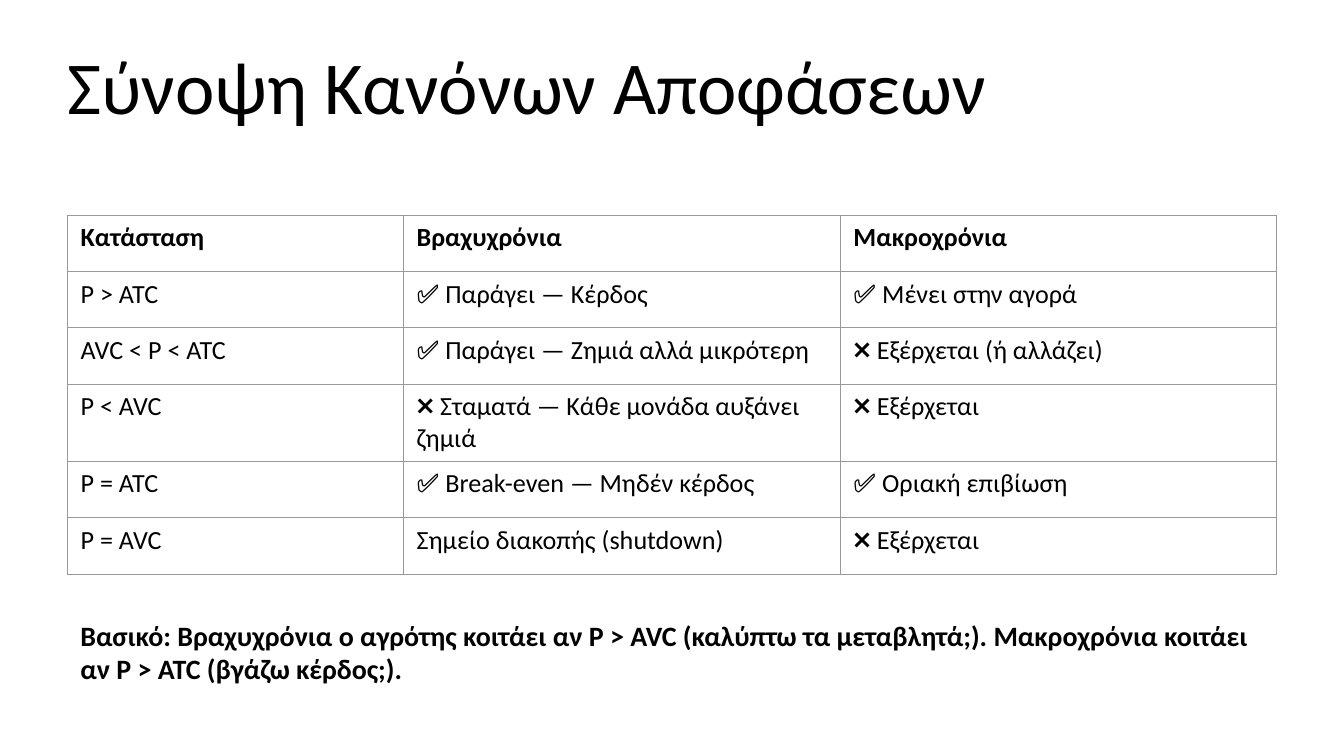
from dataclasses import dataclass

import lxml.etree
import pptx
import pptx.dml.color
import pptx.enum.text
import pptx.oxml.ns
import pptx.util

Pt = pptx.util.Pt
Anchor = pptx.enum.text.MSO_ANCHOR


@dataclass(frozen=True)
class Theme:
    font: str = "Calibri"
    text: str = "000000"
    border: str = "999999"
    border_width: float = 0.5
    title_size: float = 40
    table_size: float = 14
    note_size: float = 15


@dataclass(frozen=True)
class Box:
    left: float
    top: float
    width: float
    height: float

    def lengths(self) -> tuple:
        return Pt(self.left), Pt(self.top), Pt(self.width), Pt(self.height)


@dataclass(frozen=True)
class Rule:
    situation: str
    short_run: str
    long_run: str

    def texts(self) -> tuple:
        return self.situation, self.short_run, self.long_run


THEME = Theme()
TITLE_BOX = Box(36, 21.6, 648, 86.4)
TABLE_BOX = Box(36, 115.2, 648, 181.44)
NOTE_BOX = Box(36, 324, 648, 50.4)
COLUMN_WIDTHS = (180, 234, 234)

HEADER = Rule("Κατάσταση", "Βραχυχρόνια", "Μακροχρόνια")
RULES = (
    Rule("P > ATC", "✅ Παράγει — Κέρδος", "✅ Μένει στην αγορά"),
    Rule("AVC < P < ATC", "✅ Παράγει — Ζημιά αλλά μικρότερη", "❌ Εξέρχεται (ή αλλάζει)"),
    Rule("P < AVC", "❌ Σταματά — Κάθε μονάδα αυξάνει ζημιά", "❌ Εξέρχεται"),
    Rule("P = ATC", "✅ Break-even — Μηδέν κέρδος", "✅ Οριακή επιβίωση"),
    Rule("P = AVC", "Σημείο διακοπής (shutdown)", "❌ Εξέρχεται"),
)
NOTE = (
    "Βασικό: Βραχυχρόνια ο αγρότης κοιτάει αν P > AVC (καλύπτω τα μεταβλητά;). "
    "Μακροχρόνια κοιτάει αν P > ATC (βγάζω κέρδος;)."
)


def write_text(text_frame, text: str, *, size: float, bold: bool = False,
               anchor=Anchor.TOP) -> None:
    text_frame.word_wrap = True
    text_frame.vertical_anchor = anchor
    paragraph = text_frame.paragraphs[0]
    paragraph.alignment = pptx.enum.text.PP_ALIGN.LEFT
    run = paragraph.add_run()
    run.text = text
    run.font.name = THEME.font
    run.font.size = Pt(size)
    run.font.bold = bold
    run.font.color.rgb = pptx.dml.color.RGBColor.from_string(THEME.text)


def draw_borders(cell) -> None:
    qualified = pptx.oxml.ns.qn
    properties = cell._tc.get_or_add_tcPr()
    # Border lines must come before the cell fill
    for position, side in enumerate(("a:lnL", "a:lnR", "a:lnT", "a:lnB")):
        line = lxml.etree.Element(qualified(side), w=str(Pt(THEME.border_width)))
        fill = lxml.etree.SubElement(line, qualified("a:solidFill"))
        lxml.etree.SubElement(fill, qualified("a:srgbClr"), val=THEME.border)
        properties.insert(position, line)


def add_title(slide, text: str, box: Box) -> None:
    title = slide.shapes.title
    title.left, title.top, title.width, title.height = box.lengths()
    frame = title.text_frame
    frame.auto_size = pptx.enum.text.MSO_AUTO_SIZE.NONE
    frame.margin_left = frame.margin_right = frame.margin_top = frame.margin_bottom = 0
    write_text(frame, text, size=THEME.title_size)


def add_rule_table(slide, rules: tuple, box: Box) -> None:
    shape = slide.shapes.add_table(len(rules), len(COLUMN_WIDTHS), *box.lengths())
    table = shape.table
    table.horz_banding = False
    for column, width in zip(table.columns, COLUMN_WIDTHS):
        column.width = Pt(width)
    for row_index, (row, rule) in enumerate(zip(table.rows, rules)):
        row.height = Pt(box.height / len(rules))
        for cell, text in zip(row.cells, rule.texts()):
            cell.fill.background()
            draw_borders(cell)
            write_text(cell.text_frame, text, size=THEME.table_size, bold=row_index == 0)


def add_note(slide, text: str, box: Box) -> None:
    shape = slide.shapes.add_textbox(*box.lengths())
    write_text(shape.text_frame, text, size=THEME.note_size, bold=True, anchor=Anchor.MIDDLE)


def main() -> None:
    presentation = pptx.Presentation()
    presentation.slide_width = Pt(720)
    presentation.slide_height = Pt(405)
    slide = presentation.slides.add_slide(presentation.slide_layouts.get_by_name("Title Only"))

    # Heading, decision table and key message
    add_title(slide, "Σύνοψη Κανόνων Αποφάσεων", TITLE_BOX)
    add_rule_table(slide, (HEADER, *RULES), TABLE_BOX)
    add_note(slide, NOTE, NOTE_BOX)

    presentation.save("out.pptx")


if __name__ == "__main__":
    main()
